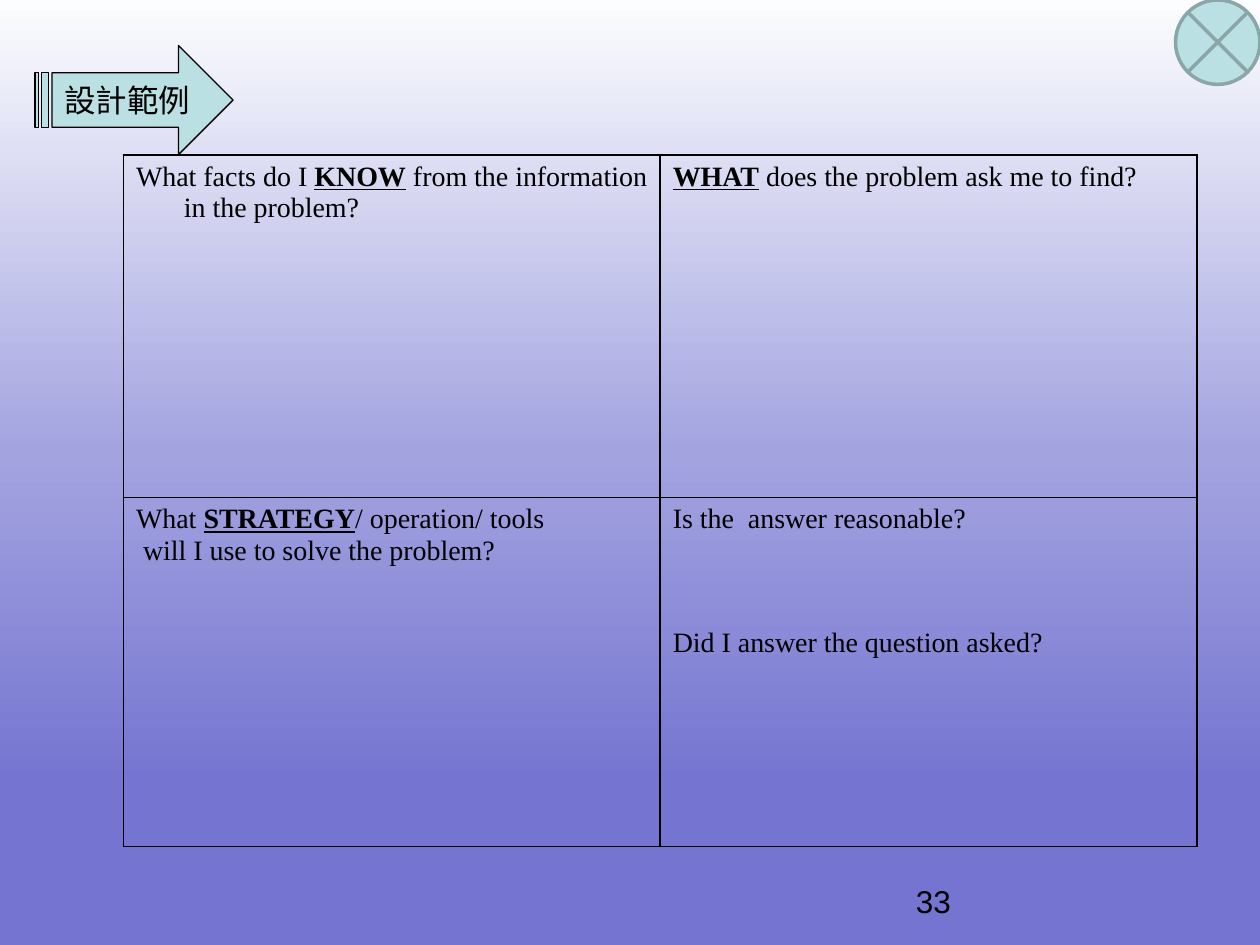
"""Build the problem-solving organiser slide with its four-question table."""
from copy import deepcopy

from lxml.etree import SubElement
from pptx import Presentation
from pptx.dml.color import RGBColor
from pptx.enum.shapes import MSO_SHAPE
from pptx.enum.text import MSO_ANCHOR, PP_ALIGN
from pptx.oxml.ns import qn
from pptx.util import Pt

THEME = {
    "ink": "000000",
    "accent": "BBE0E3",
    "accent_line": "8AA6A8",
    "backdrop": [(0, "FCFDFE"), (48, "A3A3E0"), (83, "7575D1"), (100, "7575D1")],
    "serif": "Times New Roman",
    "sans": "Arial",
    "question_size": 16,
    "label_size": 18,
}

KEY = "key"
QUESTIONS = [
    [
        [[("What facts do I ",), ("KNOW", KEY), (" from the information in the problem?",)]],
        [[("WHAT", KEY), (" does the problem ask me to find?",)]],
    ],
    [
        [
            [("What ",), ("STRATEGY", KEY), ("/ operation/ tools",)],
            [(" will I use to solve the problem?",)],
        ],
        [[("Is the  answer reasonable?",)], [("Did I answer the question asked?",)]],
    ],
]
CHECK_CELL = (1, 1)
CHECK_GAP = 53
HANGING = 27.36
TABLE_LEFT, TABLE_TOP = 70.56, 88.56
COLUMN_WIDTH = 306.72
ROW_HEIGHTS = [195.84, 199.44]
BORDER_SIDES = ("a:lnL", "a:lnR", "a:lnT", "a:lnB")
LABEL = "設計範例"
PAGE_NUMBER = "33"


def color(name):
    return RGBColor.from_string(THEME[name])


def add_span(para, text, font, size, key=False):
    span = para.add_run()
    span.text = text
    span.font.name = THEME[font]
    span.font.size = Pt(THEME[size])
    span.font.color.rgb = color("ink")
    if key:
        span.font.bold = span.font.underline = True


def paint_backdrop(page):
    fill = page.background.fill
    fill.gradient()
    fill.gradient_angle = 270
    stops = page.element.find(".//" + qn("a:gsLst"))
    for stop in list(stops):
        stops.remove(stop)
    for percent, value in THEME["backdrop"]:
        stop = SubElement(stops, qn("a:gs"), pos=str(percent * 1000))
        SubElement(stop, qn("a:srgbClr"), val=value)


def draw_borders(cell):
    properties = cell._tc.get_or_add_tcPr()
    for position, side in enumerate(BORDER_SIDES):
        line = SubElement(properties, qn(side), w=str(Pt(1)))
        fill = SubElement(line, qn("a:solidFill"))
        SubElement(fill, qn("a:srgbClr"), val=THEME["ink"])
        properties.insert(position, line)


def fill_cell(cell, paragraphs, gap):
    cell.fill.background()
    draw_borders(cell)
    frame = cell.text_frame
    for index, spans in enumerate(paragraphs):
        para = frame.add_paragraph() if index else frame.paragraphs[0]
        properties = para._p.get_or_add_pPr()
        properties.set("marL", str(Pt(HANGING)))
        properties.set("indent", str(-Pt(HANGING)))
        if index and gap:
            para.space_before = Pt(gap)
        for text, *style in spans:
            add_span(para, text, "serif", "question_size", KEY in style)


def add_questions(page):
    frame = page.shapes.add_table(
        len(QUESTIONS), len(QUESTIONS[0]), Pt(TABLE_LEFT), Pt(TABLE_TOP),
        Pt(COLUMN_WIDTH * len(QUESTIONS[0])), Pt(sum(ROW_HEIGHTS)),
    )
    table = frame.table
    table.first_row = table.horz_banding = False
    for column in table.columns:
        column.width = Pt(COLUMN_WIDTH)
    for row, height in zip(table.rows, ROW_HEIGHTS):
        row.height = Pt(height)
    for r, row in enumerate(QUESTIONS):
        for c, paragraphs in enumerate(row):
            gap = CHECK_GAP if (r, c) == CHECK_CELL else 0
            fill_cell(table.cell(r, c), paragraphs, gap)


def add_accent(page, kind, left, top, width, height, line, weight):
    shape = page.shapes.add_shape(kind, Pt(left), Pt(top), Pt(width), Pt(height))
    shape.shadow.inherit = False
    shape.fill.solid()
    shape.fill.fore_color.rgb = color("accent")
    shape.line.color.rgb = color(line)
    shape.line.width = Pt(weight)
    return shape


def write_label(shape, text, anchor):
    frame = shape.text_frame
    frame.word_wrap = True
    frame.vertical_anchor = anchor
    para = frame.paragraphs[0]
    para.alignment = PP_ALIGN.LEFT
    add_span(para, text, "sans", "label_size")


def main():
    deck = Presentation()
    deck.slide_width, deck.slide_height = Pt(720), Pt(540)
    page = deck.slides.add_slide(deck.slide_layouts[6])
    paint_backdrop(page)
    add_questions(page)
    number = page.shapes.add_textbox(Pt(516.24), Pt(500.4), Pt(167.76), Pt(28.8))
    write_label(number, PAGE_NUMBER, MSO_ANCHOR.TOP)
    arrow = add_accent(page, MSO_SHAPE.STRIPED_RIGHT_ARROW, 20, 26, 113.2, 62.4, "ink", 0.75)
    write_label(arrow, LABEL, MSO_ANCHOR.MIDDLE)
    add_accent(page, MSO_SHAPE.FLOWCHART_SUMMING_JUNCTION, 671.75, 0, 48.25, 48.25, "accent_line", 2)
    deck.save("out.pptx")


if __name__ == "__main__":
    main()
